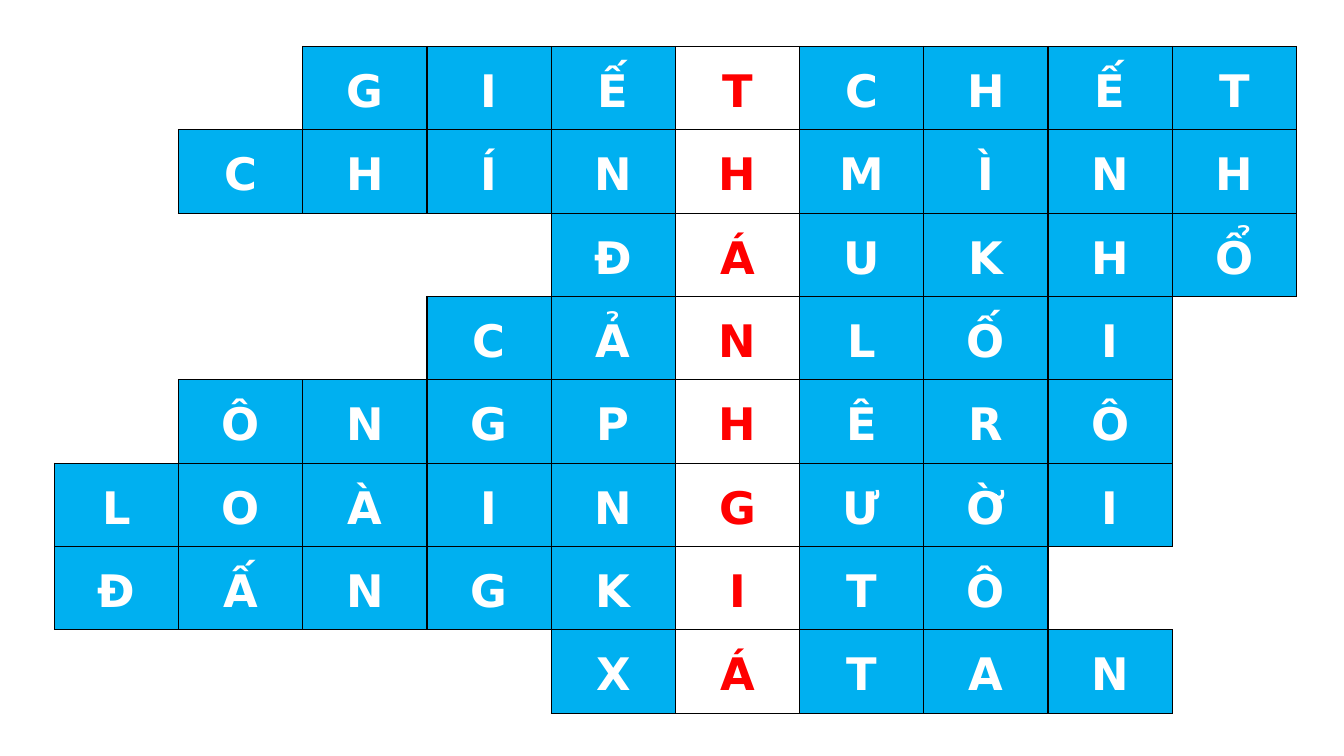
from lxml import etree
from pptx import Presentation
from pptx import util as u
from pptx.dml.color import RGBColor
from pptx.enum import text
from pptx.oxml.ns import qn

FONT = "DejaVu Sans"
BLUE, WHITE, RED, BLACK = "00B0F0", "FFFFFF", "FF0000", "000000"
COLUMNS = 10
KEY_COLUMN = 5
COLUMN_WIDTH, ROW_HEIGHT = u.Cm(3.13), u.Cm(2.1)

# Each answer with the column where it starts
ANSWERS = [
    (2, "GIẾTCHẾT"),
    (1, "CHÍNHMÌNH"),
    (4, "ĐÁUKHỔ"),
    (3, "CẢNLỐI"),
    (1, "ÔNGPHÊRÔ"),
    (0, "LOÀINGƯỜI"),
    (0, "ĐẤNGKITÔ"),
    (4, "XÁTAN"),
]

# Cell edges and the neighbour (row, column) that shares each one
EDGES = {"lnL": (0, -1), "lnR": (0, 1), "lnT": (-1, 0), "lnB": (1, 0)}


def color(value):
    return RGBColor.from_string(value)


def add_border(cell, edge, visible):
    properties = cell._tc.get_or_add_tcPr()
    line = etree.SubElement(properties, qn("a:" + edge), w=str(u.Pt(1)))
    if visible:
        fill = etree.SubElement(line, qn("a:solidFill"))
        etree.SubElement(fill, qn("a:srgbClr"), val=BLACK)
    else:
        etree.SubElement(line, qn("a:noFill"))


def write_letter(cell, letter, letter_color):
    cell.vertical_anchor = text.MSO_ANCHOR.MIDDLE
    cell.margin_left = cell.margin_right = u.Cm(0.18)
    cell.margin_top = cell.margin_bottom = 0
    paragraph = cell.text_frame.paragraphs[0]
    paragraph.alignment = text.PP_ALIGN.CENTER
    paragraph.line_spacing = 1.15
    run = paragraph.add_run()
    run.text = letter
    run.font.name = FONT
    run.font.size = u.Pt(32)
    run.font.bold = True
    run.font.color.rgb = color(letter_color)


def add_crossword(slide, left, top):
    letters = {(row, start + offset): letter
               for row, (start, answer) in enumerate(ANSWERS)
               for offset, letter in enumerate(answer)}
    table = slide.shapes.add_table(
        len(ANSWERS), COLUMNS, left, top,
        COLUMN_WIDTH * COLUMNS, ROW_HEIGHT * len(ANSWERS)).table
    table.first_row = table.horz_banding = False
    for column in table.columns:
        column.width = COLUMN_WIDTH

    for row in range(len(ANSWERS)):
        table.rows[row].height = ROW_HEIGHT
        for column in range(COLUMNS):
            cell = table.cell(row, column)
            letter = letters.get((row, column))
            # An edge shows when a letter stands on either side of it
            for edge, (down, right) in EDGES.items():
                neighbour = (row + down, column + right)
                add_border(cell, edge, bool(letter) or neighbour in letters)
            if not letter:
                cell.fill.background()
                continue
            is_key = column == KEY_COLUMN
            cell.fill.solid()
            cell.fill.fore_color.rgb = color(WHITE if is_key else BLUE)
            write_letter(cell, letter, RED if is_key else WHITE)


def main():
    presentation = Presentation()
    presentation.slide_width = u.Cm(33.87)
    presentation.slide_height = u.Cm(19.05)
    slide = presentation.slides.add_slide(presentation.slide_layouts[6])
    add_crossword(slide, u.Cm(1.37), u.Cm(1.17))
    presentation.save("out.pptx")


if __name__ == "__main__":
    main()
